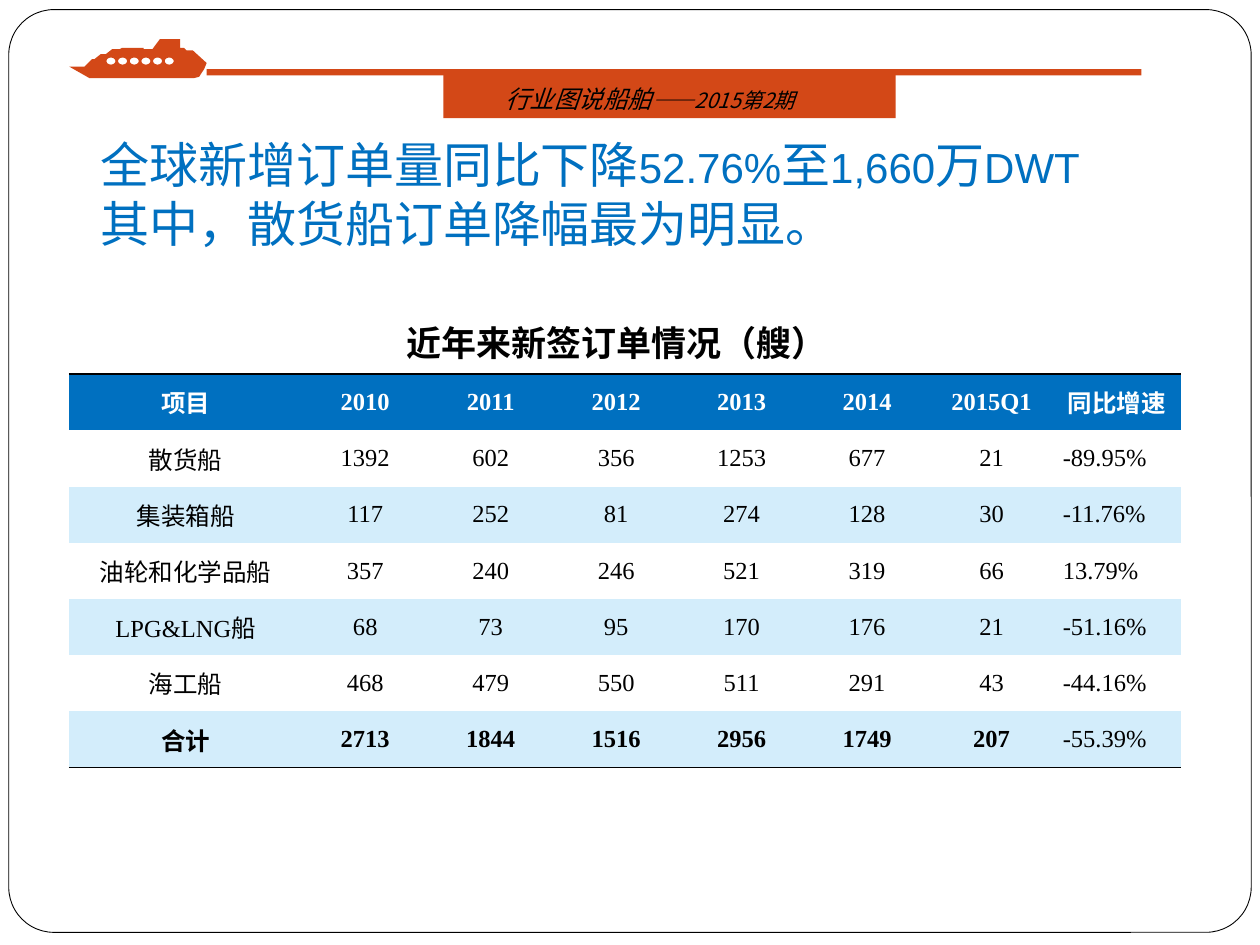
from math import cos, pi, sin

from lxml.etree import SubElement
from pptx import Presentation
from pptx.dml.color import RGBColor
from pptx.enum.shapes import MSO_SHAPE
from pptx.enum.text import MSO_ANCHOR, PP_ALIGN
from pptx.oxml.ns import qn
from pptx.util import Pt

BLACK = RGBColor(0x00, 0x00, 0x00)
WHITE = RGBColor(0xFF, 0xFF, 0xFF)
BLUE = RGBColor(0x00, 0x70, 0xC0)
PALE_BLUE = RGBColor(0xD3, 0xED, 0xFB)
ORANGE = RGBColor(0xD3, 0x48, 0x17)

SANS = "DejaVu Sans Mono"
CJK = "Noto Sans CJK SC"
SERIF = "Times New Roman"
NO_STYLE = "{2D5ABB26-0587-4C30-8999-92F81FD0307C}"

HULL = [(70.6, 6.5), (67, 6.5), (65.5, 5), (63.4, 5), (63.4, 0), (51.8, 0),
        (47.5, 5.8), (42.5, 5.8), (42.5, 5), (30.2, 5), (28.8, 5.8),
        (24.5, 5.8), (20.9, 8.6), (18, 8.6), (14.4, 11.5), (13, 11.5),
        (8.6, 15.8), (0, 15.8), (11.5, 22.3), (71.3, 22.3), (74.2, 21.6),
        (75.6, 19.4), (77, 17.3), (78.5, 13.7)]

COLUMN_WIDTHS = [133.5] + [71.7] * 5 + [70.6, 72.8]
ROWS = [
    ["项目", "2010", "2011", "2012", "2013", "2014", "2015Q1", "同比增速"],
    ["散货船", "1392", "602", "356", "1253", "677", "21", "-89.95%"],
    ["集装箱船", "117", "252", "81", "274", "128", "30", "-11.76%"],
    ["油轮和化学品船", "357", "240", "246", "521", "319", "66", "13.79%"],
    ["LPG&LNG船", "68", "73", "95", "170", "176", "21", "-51.16%"],
    ["海工船", "468", "479", "550", "511", "291", "43", "-44.16%"],
    ["合计", "2713", "1844", "1516", "2956", "1749", "207", "-55.39%"],
]


def format_run(r, size, font, color, bold=False, italic=False):
    """Format a run; Chinese text beside the serif font is set in sans."""
    r.font.size = Pt(size)
    r.font.name = font
    r.font.color.rgb = color
    r.font.bold = bold
    r.font.italic = italic
    SubElement(r.font._element, qn("a:ea"), typeface=CJK if font == SERIF else font)


def add_text(shapes, left, top, width, height, lines, color, **style):
    """Add a text box; each line is a list of (text, size, font) runs."""
    box = shapes.add_textbox(Pt(left), Pt(top), Pt(width), Pt(height))
    tf = box.text_frame
    tf.word_wrap = True
    for i, runs in enumerate(lines):
        p = tf.add_paragraph() if i else tf.paragraphs[0]
        for text, size, font in runs:
            r = p.add_run()
            r.text = text
            format_run(r, size, font, color, **style)


def paint(sp, color):
    sp.shadow.inherit = False
    sp.fill.solid()
    sp.fill.fore_color.rgb = color
    sp.line.fill.background()


def add_frame(shapes, left, top, width, height):
    sp = shapes.add_shape(MSO_SHAPE.ROUNDED_RECTANGLE,
                          Pt(left), Pt(top), Pt(width), Pt(height))
    sp.adjustments[0] = 0.049
    paint(sp, WHITE)
    sp.line.color.rgb = BLACK
    sp.line.width = Pt(0.5)


def add_ship(shapes, left, top):
    """Add a ship outline with a row of six elliptical portholes cut out."""
    contours = [HULL]
    for i in range(6):
        cx, cy = 23.8 + 6.66 * i, 12.6
        contours.append([(cx + 2.55 * cos(2 * pi * k / 24),
                          cy + 2 * sin(2 * pi * k / 24)) for k in range(24)])
    # Freeform coordinates are whole numbers, so points are given in EMU.
    contours = [[(Pt(x), Pt(y)) for x, y in contour] for contour in contours]
    builder = shapes.build_freeform(*contours[0][0])
    builder.add_line_segments(contours[0][1:], close=True)
    for porthole in contours[1:]:
        builder.move_to(*porthole[0])
        builder.add_line_segments(porthole[1:], close=True)
    paint(builder.convert_to_shape(Pt(left), Pt(top)), ORANGE)


def add_banner(slide, left, top):
    shapes = slide.shapes.add_group_shape().shapes
    for dx, width, height in ((78.5, 534.2, 3.6), (213.8, 258.5, 28.1)):
        bar = shapes.add_shape(MSO_SHAPE.RECTANGLE, Pt(left + dx), Pt(top + 17.2),
                               Pt(width), Pt(height))
        paint(bar, ORANGE)
    add_ship(shapes, left, top)
    add_text(shapes, left + 241.9, top + 22.3, 202.3, 24.5,
             [[("行业图说船舶", 14, CJK), ("——2015第2期", 12, CJK)]],
             BLACK, italic=True)


def add_border(cell, side):
    ln = SubElement(cell._tc.get_or_add_tcPr(), qn(f"a:{side}"), w=str(Pt(1)))
    fill = SubElement(ln, qn("a:solidFill"))
    SubElement(fill, qn("a:srgbClr"), val=str(BLACK))


def add_orders_table(slide, left, top, width, height):
    frame = slide.shapes.add_table(len(ROWS), len(COLUMN_WIDTHS),
                                   Pt(left), Pt(top), Pt(width), Pt(height))
    table = frame.table
    table._tbl.tblPr.find(qn("a:tableStyleId")).text = NO_STYLE
    for column, column_width in zip(table.columns, COLUMN_WIDTHS):
        column.width = Pt(column_width)
    last_row, last_col = len(ROWS) - 1, len(COLUMN_WIDTHS) - 1
    for i, values in enumerate(ROWS):
        table.rows[i].height = Pt(height / len(ROWS))
        for j, value in enumerate(values):
            cell = table.cell(i, j)
            cell.margin_left = cell.margin_right = Pt(5.4)
            cell.margin_top = cell.margin_bottom = 0
            cell.vertical_anchor = MSO_ANCHOR.MIDDLE
            if i == 0:
                add_border(cell, "lnT")
            elif i == last_row:
                add_border(cell, "lnB")
            if i % 2:
                cell.fill.background()
            else:
                cell.fill.solid()
                cell.fill.fore_color.rgb = PALE_BLUE if i else BLUE
            p = cell.text_frame.paragraphs[0]
            p.text = value
            growth = i > 0 and j == last_col
            p.alignment = PP_ALIGN.JUSTIFY if growth else PP_ALIGN.CENTER
            bold = i in (0, last_row) and not growth
            format_run(p.runs[0], 14, SERIF, BLACK if i else WHITE, bold=bold)


def main():
    prs = Presentation()
    prs.slide_width, prs.slide_height = Pt(720), Pt(540)
    slide = prs.slides.add_slide(prs.slide_layouts[6])
    add_frame(slide.shapes, 5, 5.5, 710, 527.3)
    add_orders_table(slide, 39.4, 213.8, 635.4, 225)
    add_text(slide.shapes, 225, 180, 393.8, 31.7,
             [[("近年来新签订单情况（艘）", 20, SANS)]], BLACK, bold=True)
    add_text(slide.shapes, 50.4, 73.4, 641.5, 74.9,
             [[("全球新增订单量同比下降", 28, SANS), ("52.76%", 24, "Arial"),
               ("至", 28, SANS), ("1,660", 24, "Arial"),
               ("万", 28, SANS), ("DWT", 24, "Arial")],
              [("其中，散货船订单降幅最为明显。", 28, SANS)]], BLUE)
    add_banner(slide, 39.6, 22.3)
    prs.save("out.pptx")


if __name__ == "__main__":
    main()
